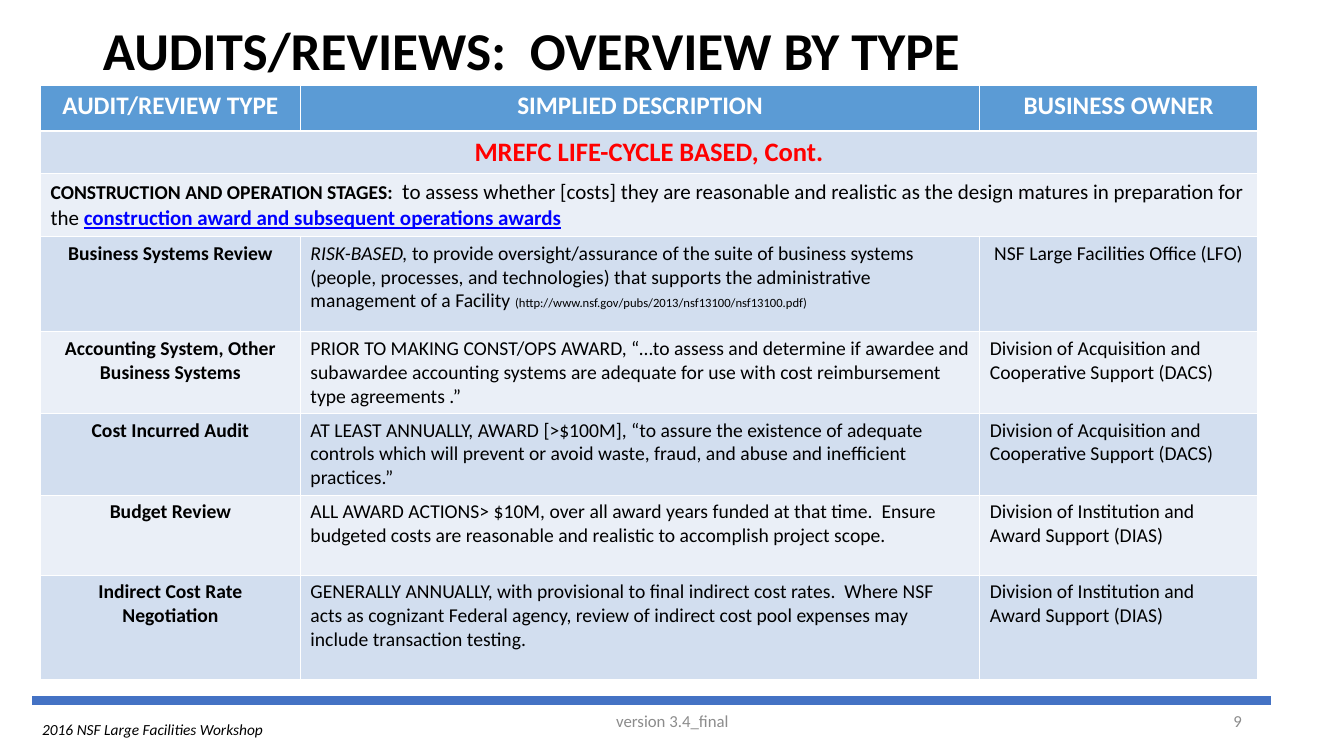
import pptx
import pptx.dml.color
import pptx.enum.shapes
import pptx.enum.text
import pptx.oxml
import pptx.util
from pptx.util import Cm

COLORS = {
    "black": "000000", "white": "FFFFFF", "gray": "8C8C8C", "red": "FF0000",
    "link": "0000FF", "header": "5B9BD5", "dark band": "D2DEEF",
    "light band": "EAEFF7", "rule": "4472C4",
}
ALIGN = pptx.enum.text.PP_ALIGN
ANCHOR = pptx.enum.text.MSO_ANCHOR


def write(frame, text, size=14, color="black", bold=False, italic=False,
          underline=False, align=ALIGN.LEFT, anchor=ANCHOR.MIDDLE):
    """Append one formatted run to the first paragraph of a text frame."""
    frame.word_wrap = True
    frame.vertical_anchor = anchor
    paragraph = frame.paragraphs[0]
    paragraph.alignment = align
    run = paragraph.add_run()
    run.text = text
    run.font.name = "Calibri"
    run.font.size = pptx.util.Pt(size)
    run.font.bold = bold
    run.font.italic = italic
    run.font.underline = underline
    run.font.color.rgb = pptx.dml.color.RGBColor.from_string(COLORS[color])


def fill_cell(cell, color):
    cell.fill.solid()
    cell.fill.fore_color.rgb = pptx.dml.color.RGBColor.from_string(COLORS[color])


deck = pptx.Presentation()
deck.slide_width, deck.slide_height = Cm(33.87), Cm(19.05)
slide = deck.slides.add_slide(deck.slide_layouts[5])

# Title
title = slide.shapes.title
title.left, title.top, title.width, title.height = Cm(2.34), Cm(0), Cm(29.36), Cm(2.67)
write(title.text_frame, "AUDITS/REVIEWS:  OVERVIEW BY TYPE", size=38, bold=True)
title.text_frame.paragraphs[0].line_spacing = 0.9

# Table frame
column_widths = [6.55, 17.12, 7.0]
row_heights = [1.14, 1.05, 1.56, 2.4, 2.04, 2.04, 2.02, 2.62]
audits = slide.shapes.add_table(
    len(row_heights), len(column_widths), Cm(1.02), Cm(2.16),
    Cm(sum(column_widths)), Cm(sum(row_heights))).table
for column, width in zip(audits.columns, column_widths):
    column.width = Cm(width)
for index, (row, height) in enumerate(zip(audits.rows, row_heights)):
    row.height = Cm(height)
    band = "header" if index == 0 else "dark band" if index % 2 else "light band"
    for cell in row.cells:
        fill_cell(cell, band)

# Heading rows
for column, heading in enumerate(
        ["AUDIT/REVIEW TYPE", "SIMPLIED DESCRIPTION", "BUSINESS OWNER"]):
    write(audits.cell(0, column).text_frame, heading, size=18, color="white",
          bold=True, align=ALIGN.CENTER, anchor=ANCHOR.TOP)
for row in (1, 2):
    audits.cell(row, 0).merge(audits.cell(row, 2))
write(audits.cell(1, 0).text_frame, "MREFC LIFE-CYCLE BASED, Cont.", size=19,
      color="red", bold=True, align=ALIGN.CENTER)
stages = audits.cell(2, 0).text_frame
write(stages, "CONSTRUCTION AND OPERATION STAGES:  ", bold=True)
write(stages, "t", size=16)
write(stages, "o assess whether [costs] they are reasonable and realistic as the "
      "design matures in preparation for the ", size=15)
write(stages, "construction award and subsequent operations awards", size=15,
      color="link", bold=True, underline=True)

# Reviews: type, description runs, owner, owner alignment
DACS = "Division of Acquisition and Cooperative Support (DACS)"
DIAS = "Division of Institution and Award Support (DIAS)"
reviews = [
    ("Business Systems Review",
     [("RISK-BASED, ", {"italic": True}),
      ("to provide oversight/assurance of the suite of business systems (people, "
       "processes, and technologies) that supports the administrative management "
       "of a Facility ", {}),
      ("(http://www.nsf.gov/pubs/2013/nsf13100/nsf13100.pdf)", {"size": 9})],
     "NSF Large Facilities Office (LFO)", ALIGN.CENTER),
    ("Accounting System, Other Business Systems",
     [("PRIOR TO MAKING CONST/OPS AWARD, “…to assess and determine if awardee and "
       "subawardee accounting systems are adequate for use with cost reimbursement "
       "type agreements .”", {})],
     DACS, ALIGN.LEFT),
    ("Cost Incurred Audit",
     [("AT LEAST ANNUALLY, AWARD [>$100M], “to assure the existence of adequate "
       "controls which will prevent or avoid waste, fraud, and abuse and "
       "inefficient practices.”", {})],
     DACS, ALIGN.LEFT),
    ("Budget Review",
     [("ALL AWARD ACTIONS> $10M, over all award years funded at that time.  Ensure "
       "budgeted costs are reasonable and realistic to accomplish project scope.", {})],
     DIAS, ALIGN.LEFT),
    ("Indirect Cost Rate Negotiation",
     [("GENERALLY ANNUALLY, with provisional to final indirect cost rates.  Where "
       "NSF acts as cognizant Federal agency, review of indirect cost pool expenses "
       "may include transaction testing.", {})],
     DIAS, ALIGN.LEFT),
]
for row, (review, description, owner, owner_align) in enumerate(reviews, start=3):
    write(audits.cell(row, 0).text_frame, review, bold=True, align=ALIGN.CENTER)
    for text, style in description:
        write(audits.cell(row, 1).text_frame, text, anchor=ANCHOR.TOP, **style)
    write(audits.cell(row, 2).text_frame, owner, align=owner_align)
audits.cell(3, 0).margin_bottom = Cm(0.74)

# Footer
rule = slide.shapes.add_connector(
    pptx.enum.shapes.MSO_CONNECTOR.STRAIGHT, Cm(0.81), Cm(17.65), Cm(32.03), Cm(17.65))
rule.line.color.rgb = pptx.dml.color.RGBColor.from_string(COLORS["rule"])
rule.line.width = pptx.util.Pt(6)
rule._element.spPr.append(pptx.oxml.parse_xml(
    '<a:effectLst xmlns:a="http://schemas.openxmlformats.org/drawingml/2006/main"/>'))

footers = [
    ("9", (23.93, 17.65, 7.62, 1.02),
     {"size": 12, "color": "gray", "align": ALIGN.RIGHT}),
    ("2016 NSF Large Facilities Workshop", (0.81, 18.01, 7.62, 0.74),
     {"size": 11, "italic": True, "anchor": ANCHOR.TOP}),
    ("version 3.4_final", (11.23, 17.65, 11.43, 1.02),
     {"size": 12, "color": "gray", "align": ALIGN.CENTER}),
]
for text, place, style in footers:
    footer = slide.shapes.add_textbox(*map(Cm, place))
    write(footer.text_frame, text, **style)

deck.save("out.pptx")
